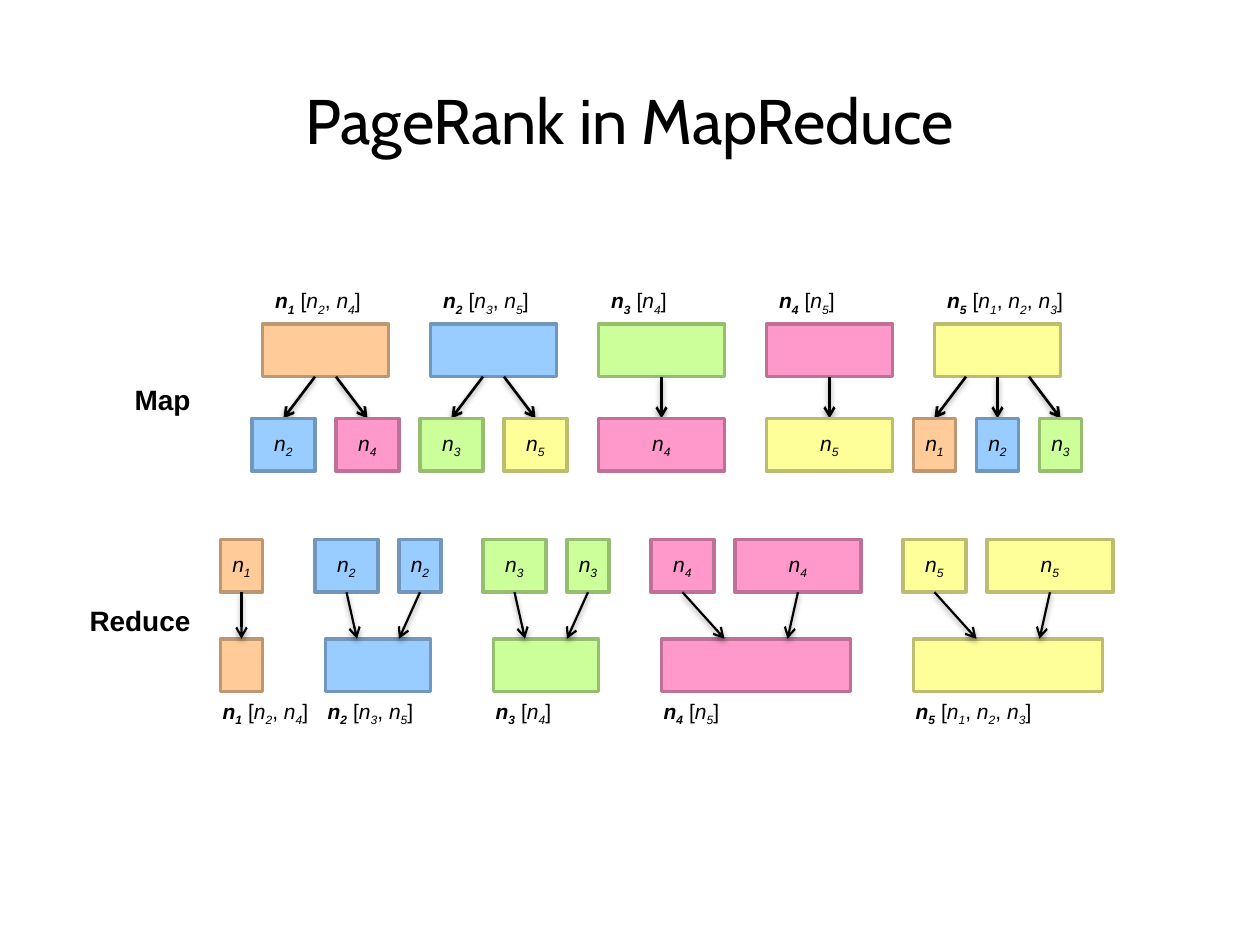
from dataclasses import dataclass

from lxml import etree
from pptx import Presentation
from pptx.dml.color import RGBColor
from pptx.enum.shapes import MSO_CONNECTOR, MSO_SHAPE
from pptx.enum.text import MSO_ANCHOR, PP_ALIGN as Align
from pptx.oxml import parse_xml
from pptx.oxml.ns import nsdecls, qn
from pptx.util import Inches, Length, Pt


@dataclass(frozen=True)
class Theme:
    text: str = "000000"
    body_font: str = "Arial"
    title_font: str = "Cabin"
    node_size: int = 12
    phase_size: int = 16
    title_size: int = 36
    border: float = 2
    map_arrow: float = 1.5
    reduce_arrow: float = 1.25


@dataclass(frozen=True)
class Node:
    number: int
    links: tuple[int, ...]
    fill: str
    line: str
    reduce_left: float  # in grid units

    @property
    def share(self) -> float:
        """Width of the piece sent along each link."""
        return PARENT_W / len(self.links)


@dataclass(frozen=True)
class Box:
    left: float
    width: float

    @property
    def center(self) -> float:
        return self.left + self.width / 2


THEME = Theme()

# Horizontal grid: one unit is a sixth of an inch
PARENT_W, GAP, MAP_LEFT, MAP_PITCH = 6, 1, 12.5, 8

# Vertical positions in inches
BOX_H, LABEL_H = 0.42, 0.31
MAP_LABEL, MAP_TOP, MAP_BOTTOM = 2.25, 2.57, 3.32
REDUCE_TOP, REDUCE_BOTTOM, REDUCE_LABEL = 4.28, 5.07, 5.51

NODES = (
    Node(1, (2, 4), "FFCC99", "BD9771", 10.5),
    Node(2, (3, 5), "99CCFF", "7197BD", 15),
    Node(3, (4,), "CCFF99", "97BD71", 23),
    Node(4, (5,), "FF99CC", "BD7197", 31),
    Node(5, (1, 2, 3), "FFFF99", "BDBD71", 43),
)


def grid(units: float) -> Length:
    return Inches(units / 6)


def rgb(value: str) -> RGBColor:
    return RGBColor.from_string(value)


def style(p, size: float, font: str = THEME.body_font, align=Align.LEFT) -> None:
    p.alignment = align
    p.font.name = font
    p.font.size = Pt(size)
    p.font.color.rgb = rgb(THEME.text)


def add_run(p, text: str, italic: bool = False, bold: bool = False):
    r = p.add_run()
    r.text = text
    r.font.italic = italic
    r.font.bold = bold
    return r


def add_name(p, number: int, bold: bool = False) -> None:
    add_run(p, "n", True, bold)
    sub = add_run(p, str(number), True, bold)
    sub.font._element.set("baseline", "-25000")


def add_text(s, left: float, top: float, width: float, height: float, text: str,
             size: float, font: str, align, bold: bool, wrap: bool) -> None:
    tf = s.shapes.add_textbox(Inches(left), Inches(top), Inches(width), Inches(height)).text_frame
    tf.word_wrap = wrap
    p = tf.paragraphs[0]
    style(p, size, font, align)
    p.font.bold = bold
    p.add_run().text = text


def add_box(s, box: Box, top: float, node: Node, named: bool = False) -> None:
    sp = s.shapes.add_shape(MSO_SHAPE.RECTANGLE, grid(box.left), Inches(top),
                            grid(box.width), Inches(BOX_H))
    sp.shadow.inherit = False
    sp.fill.solid()
    sp.fill.fore_color.rgb = rgb(node.fill)
    sp.line.color.rgb = rgb(node.line)
    sp.line.width = Pt(THEME.border)
    if named:
        tf = sp.text_frame
        tf.margin_left = tf.margin_right = tf.margin_top = tf.margin_bottom = 0
        tf.word_wrap = False
        tf.vertical_anchor = MSO_ANCHOR.MIDDLE
        style(tf.paragraphs[0], THEME.node_size, align=Align.CENTER)
        add_name(tf.paragraphs[0], node.number)


def add_arrow(s, x1: float, y1: float, x2: float, y2: float, width: float) -> None:
    c = s.shapes.add_connector(MSO_CONNECTOR.STRAIGHT, grid(x1), Inches(y1), grid(x2), Inches(y2))
    c.line.color.rgb = rgb(THEME.text)
    c.line.width = Pt(width)
    etree.SubElement(c.line._get_or_add_ln(), qn("a:tailEnd"), type="arrow")
    c._element.spPr.append(parse_xml(
        f'<a:effectLst {nsdecls("a")}><a:outerShdw blurRad="40000" dist="20000" dir="5400000" '
        f'rotWithShape="0"><a:srgbClr val="{THEME.text}"><a:alpha val="38000"/></a:srgbClr>'
        '</a:outerShdw></a:effectLst>'))


def add_label(s, left: float, top: float, node: Node) -> None:
    """A one-cell table holding the node and its adjacency list."""
    table = s.shapes.add_table(1, 1, grid(left), Inches(top), Inches(1.58), Inches(LABEL_H)).table
    table.first_row = table.horz_banding = False
    # The built-in "No Style, No Grid" table style
    table._tbl.tblPr.find(qn("a:tableStyleId")).text = "{2D5ABB26-0587-4C30-8999-92F81FD0307C}"
    cell = table.cell(0, 0)
    cell.fill.background()
    p = cell.text_frame.paragraphs[0]
    style(p, THEME.node_size)
    add_name(p, node.number, bold=True)
    for i, link in enumerate(node.links):
        add_run(p, ", " if i else " [")
        add_name(p, link)
    add_run(p, "]")


def lay_out(left: float, widths: list[float]) -> list[Box]:
    return [Box(left + sum(widths[:i]) + i * GAP, w) for i, w in enumerate(widths)]


def spread(center: float, count: int, step: float) -> list[float]:
    return [center + (i - (count - 1) / 2) * step for i in range(count)]


def draw_map(s, index: int, node: Node) -> None:
    parent = Box(MAP_LEFT + index * MAP_PITCH, PARENT_W)
    n = len(node.links)
    total = PARENT_W + (n - 1) * GAP
    children = lay_out(parent.center - total / 2, [node.share] * n)
    add_label(s, parent.left, MAP_LABEL, node)
    add_box(s, parent, MAP_TOP, node)
    for start, child, link in zip(spread(parent.center, n, n / 2), children, node.links):
        add_arrow(s, start, MAP_TOP + BOX_H, child.center, MAP_BOTTOM, THEME.map_arrow)
        add_box(s, child, MAP_BOTTOM, NODES[link - 1], named=True)


def draw_reduce(s, node: Node) -> None:
    widths = [other.share for other in NODES if node.number in other.links]
    sources = lay_out(node.reduce_left, widths)
    result = Box(node.reduce_left + (len(widths) - 1) * GAP / 2, sum(widths))
    add_box(s, result, REDUCE_BOTTOM, node)
    for source, end in zip(sources, spread(result.center, len(widths), min(widths))):
        add_box(s, source, REDUCE_TOP, node, named=True)
        add_arrow(s, source.center, REDUCE_TOP + BOX_H, end, REDUCE_BOTTOM, THEME.reduce_arrow)
    add_label(s, result.left - 0.5, REDUCE_LABEL, node)


def main() -> None:
    prs = Presentation()
    prs.slide_width, prs.slide_height = Inches(10), Inches(7.5)
    s = prs.slides.add_slide(prs.slide_layouts[6])

    # Title and phase names
    add_text(s, 0, 0.6, 10, 0.75, "PageRank in MapReduce", THEME.title_size,
             THEME.title_font, Align.CENTER, bold=False, wrap=True)
    for text, left, top, width in (("Map", 0.96, 2.99, 0.65), ("Reduce", 0.6, 4.74, 1.01)):
        add_text(s, left, top, width, 0.37, text, THEME.phase_size,
                 THEME.body_font, Align.RIGHT, bold=True, wrap=False)

    # Both phases
    for i, node in enumerate(NODES):
        draw_map(s, i, node)
        draw_reduce(s, node)

    prs.save("out.pptx")


if __name__ == "__main__":
    main()
